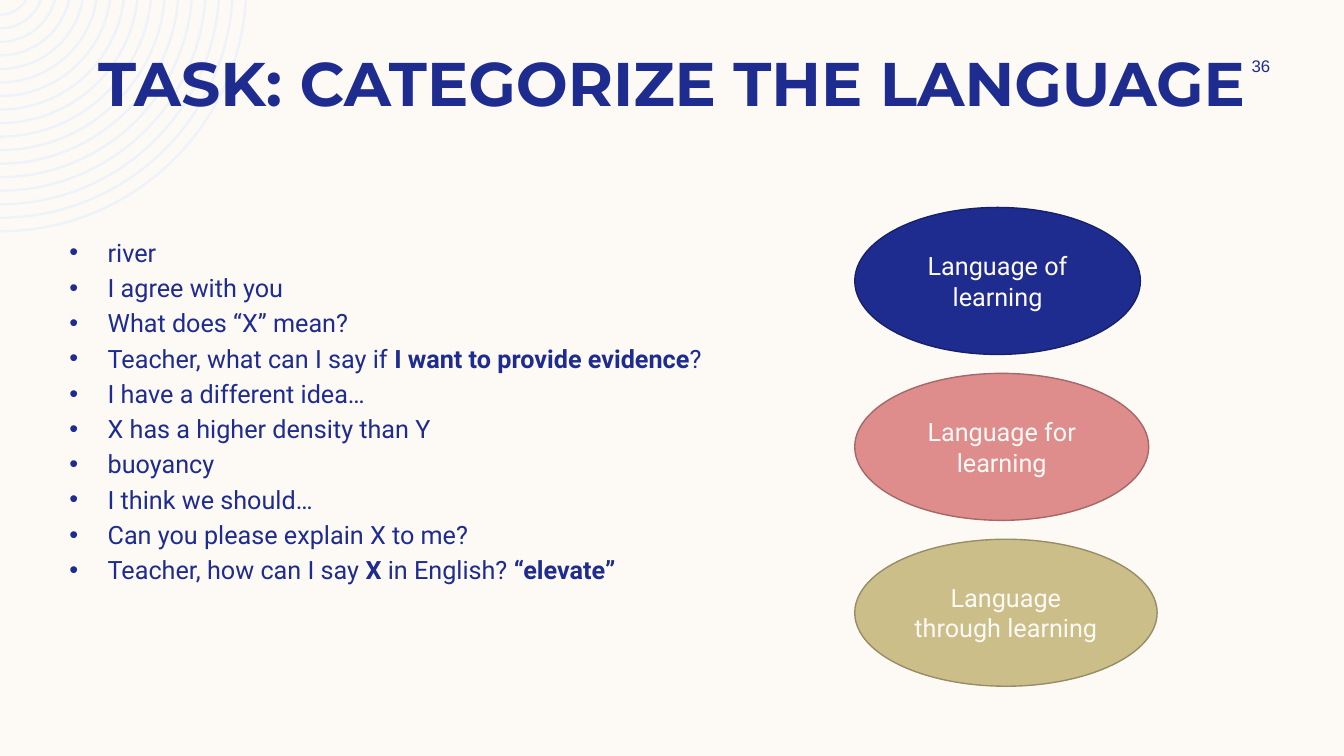
from dataclasses import dataclass
from math import asin, cos, pi, sin, tan

from lxml import etree
from pptx import Presentation
from pptx.dml.color import RGBColor
from pptx.enum.shapes import MSO_SHAPE
from pptx.enum.text import MSO_ANCHOR, MSO_AUTO_SIZE, PP_ALIGN
from pptx.oxml.ns import qn
from pptx.util import Emu, Inches, Pt

ELLIPSE = MSO_SHAPE.OVAL
TOP, MIDDLE = MSO_ANCHOR.TOP, MSO_ANCHOR.MIDDLE
LEFT, CENTER = PP_ALIGN.LEFT, PP_ALIGN.CENTER
NO_AUTOFIT = MSO_AUTO_SIZE.NONE

CREAM = RGBColor(0xFD, 0xFA, 0xF6)
NAVY = RGBColor(0x1F, 0x2C, 0x8F)
DARK_NAVY = RGBColor(0x17, 0x21, 0x6A)
ROSE = RGBColor(0xDE, 0x8C, 0x8C)
DARK_ROSE = RGBColor(0xA4, 0x68, 0x68)
SAND = RGBColor(0xCC, 0xBE, 0x89)
DARK_SAND = RGBColor(0x97, 0x8D, 0x65)
PALE_BLUE = RGBColor(0xEE, 0xF3, 0xFA)

# The slide is a grid of 160 by 90 square cells, twelve to the inch.
CELL = Inches(1) / 12
SLIDE_COLUMNS, SLIDE_ROWS = 160, 90

RING_COUNT = 17
RING_STEP = 1.61
RING_WIDTH = 0.29
SMALLEST_RADIUS = 3.72
CENTER_ABOVE_SLIDE = 1.8

CATEGORY_LEFT, CATEGORY_TOP = 101.76, 24.7
CATEGORY_HEIGHT, CATEGORY_PITCH = 17.5, 19.75
BULLET_INDENT = Inches(0.38)


@dataclass(frozen=True)
class Area:
    column: float
    row: float
    columns: float
    rows: float


@dataclass(frozen=True)
class Span:
    text: str
    bold: bool = False


@dataclass(frozen=True)
class Category:
    label: str
    columns: float
    fill: RGBColor
    outline: RGBColor


TITLE_AREA = Area(10, 4.68, 140, 10.08)
PHRASES_AREA = Area(7.08, 27.64, 145.92, 58.2)
NUMBER_AREA = Area(143.64, 6, 12.96, 3.6)

PHRASES = [
    [Span("river")],
    [Span("I agree with you")],
    [Span("What does “X” mean?")],
    [Span("Teacher, what can I say if "), Span("I want to provide evidence", True), Span("?")],
    [Span("I have a different idea…")],
    [Span("X has a higher density than Y")],
    [Span("buoyancy")],
    [Span("I think we should…")],
    [Span("Can you please explain X to me?")],
    [Span("Teacher, how can I say "), Span("X", True), Span(" in English? "),
     Span("“elevate”", True)],
]

CATEGORIES = [
    Category("Language of learning", 34, NAVY, DARK_NAVY),
    Category("Language for learning", 35, ROSE, DARK_ROSE),
    Category("Language through learning", 36, SAND, DARK_SAND),
]


def cells(count: float) -> Emu:
    return Emu(round(count * CELL))


def bounds(area: Area) -> tuple[Emu, Emu, Emu, Emu]:
    return cells(area.column), cells(area.row), cells(area.columns), cells(area.rows)


def add_bullet(para) -> None:
    properties = para._p.get_or_add_pPr()
    properties.set("marL", str(BULLET_INDENT))
    properties.set("indent", str(-BULLET_INDENT))
    etree.SubElement(properties, qn("a:buFont")).set("typeface", "Arial")
    etree.SubElement(properties, qn("a:buChar")).set("char", "•")


def write(frame, paragraphs: list[list[Span]], *, size: float = 18, font: str = "Roboto",
          color: RGBColor = NAVY, align=CENTER, anchor=MIDDLE,
          space_before: float = 0, bullets: bool = False) -> None:
    frame.word_wrap = True
    frame.auto_size = NO_AUTOFIT
    frame.vertical_anchor = anchor
    for index, spans in enumerate(paragraphs):
        para = frame.add_paragraph() if index else frame.paragraphs[0]
        para.alignment = align
        para.space_before = Pt(space_before)
        if bullets:
            add_bullet(para)
        for span in spans:
            run = para.add_run()
            run.text = span.text
            run.font.name = font
            run.font.size = Pt(size)
            run.font.bold = span.bold
            run.font.color.rgb = color


def arc(radius: float) -> list[tuple[Emu, Emu]]:
    """Bezier points of the arc from the slide's top edge to its left edge."""
    first = asin(CENTER_ABOVE_SLIDE / radius)
    handle = radius * 4 / 3 * tan((pi / 2 - first) / 4)
    start = (radius * cos(first), 0)
    end = (0, radius - CENTER_ABOVE_SLIDE)
    points = [start,
              (start[0] - handle * sin(first), handle * cos(first)),
              (handle, end[1]),
              end]
    return [(cells(column), cells(row)) for column, row in points]


def curve_arcs(rings) -> None:
    """Turn the two runs of three segments in each ring into Bezier curves."""
    segments = list(rings.element.iter(qn("a:lnTo")))
    for ring_start in range(0, len(segments), 7):
        for first in (ring_start, ring_start + 4):
            curve = etree.Element(qn("a:cubicBezTo"))
            segments[first].addprevious(curve)
            for segment in segments[first:first + 3]:
                curve.append(segment[0])
                segment.getparent().remove(segment)


def add_rings(page):
    builder = None
    for index in range(RING_COUNT):
        radius = SMALLEST_RADIUS + index * RING_STEP
        outline = arc(radius) + arc(radius - RING_WIDTH)[::-1]
        if builder is None:
            builder = page.shapes.build_freeform(*outline[0])
        else:
            builder.move_to(*outline[0])
        builder.add_line_segments(outline[1:], close=True)
    rings = builder.convert_to_shape()
    curve_arcs(rings)
    rings.shadow.inherit = False
    rings.fill.solid()
    rings.fill.fore_color.rgb = PALE_BLUE
    rings.line.fill.background()
    return rings


def add_title(page):
    title = page.shapes.title
    title.left, title.top, title.width, title.height = bounds(TITLE_AREA)
    frame = title.text_frame
    frame.margin_left = frame.margin_right = frame.margin_top = frame.margin_bottom = 0
    write(frame, [[Span("TASK: CATEGORIZE THE LANGUAGE", True)]], size=44, font="Montserrat")
    return title


def add_category(page, category: Category, index: int) -> None:
    area = Area(CATEGORY_LEFT, CATEGORY_TOP + index * CATEGORY_PITCH,
                category.columns, CATEGORY_HEIGHT)
    ellipse = page.shapes.add_shape(ELLIPSE, *bounds(area))
    ellipse.shadow.inherit = False
    ellipse.fill.solid()
    ellipse.fill.fore_color.rgb = category.fill
    ellipse.line.color.rgb = category.outline
    ellipse.line.width = Pt(1)
    write(ellipse.text_frame, [[Span(category.label)]], color=CREAM)


def main() -> None:
    deck = Presentation()
    deck.slide_width, deck.slide_height = cells(SLIDE_COLUMNS), cells(SLIDE_ROWS)
    page = deck.slides.add_slide(deck.slide_layouts[5])
    page.background.fill.solid()
    page.background.fill.fore_color.rgb = CREAM
    title = add_title(page)
    title.element.addprevious(add_rings(page).element)
    phrases = page.shapes.add_textbox(*bounds(PHRASES_AREA))
    write(phrases.text_frame, PHRASES, align=LEFT, anchor=TOP, space_before=3.6, bullets=True)
    number = page.shapes.add_textbox(*bounds(NUMBER_AREA))
    write(number.text_frame, [[Span("36")]], size=12, font="Arial")
    for index, category in enumerate(CATEGORIES):
        add_category(page, category, index)
    deck.save("out.pptx")


if __name__ == "__main__":
    main()
